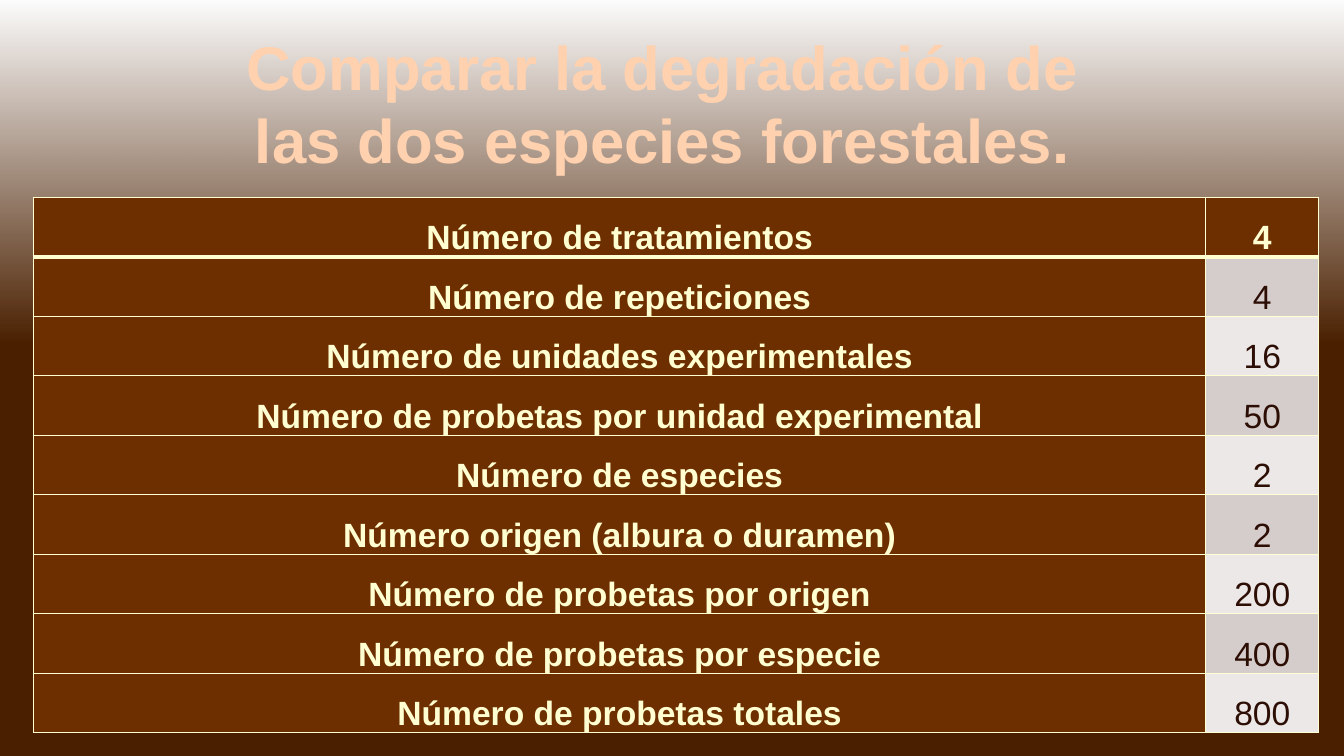
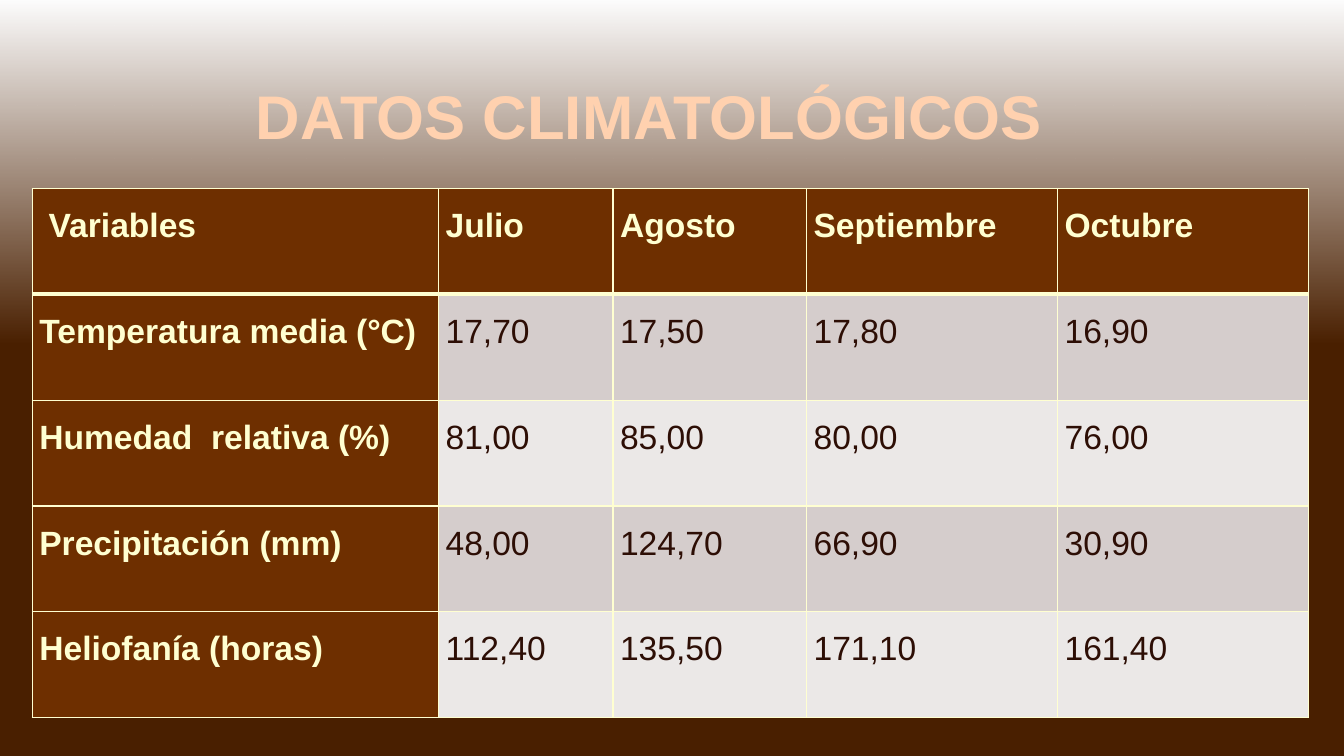
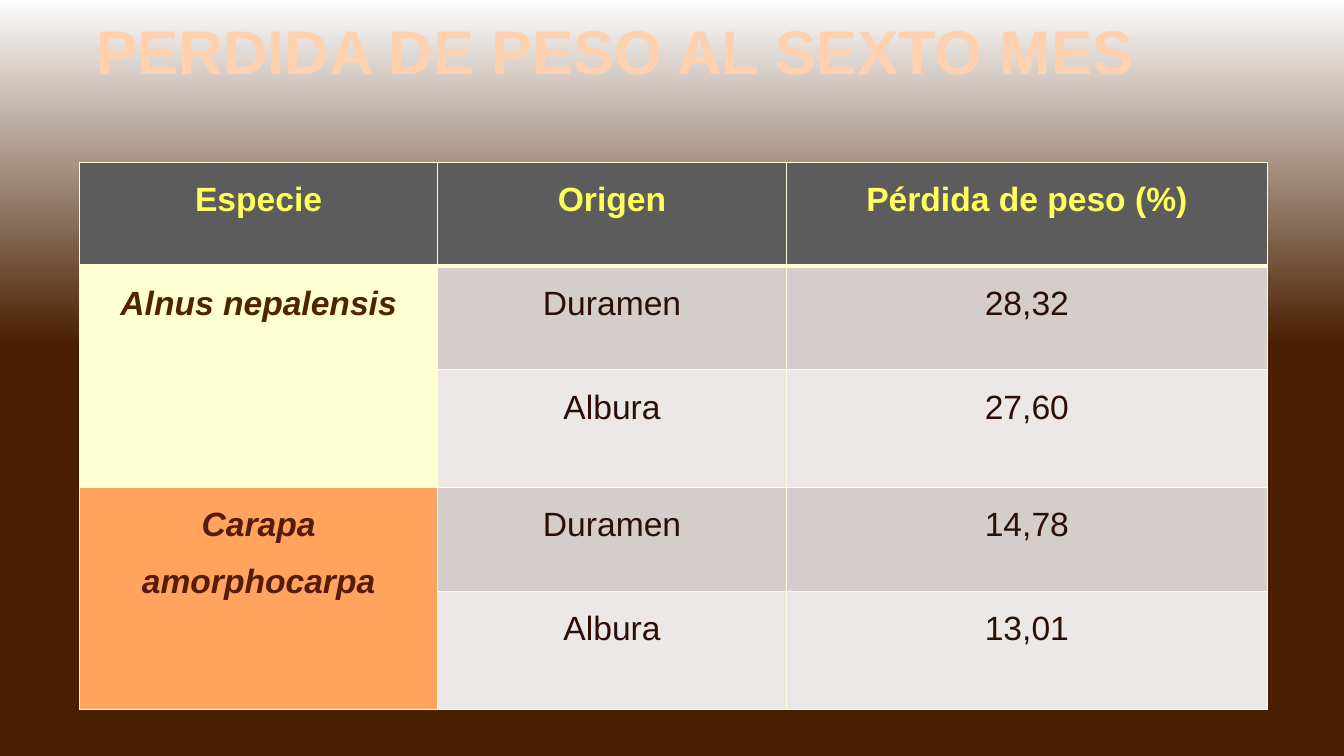
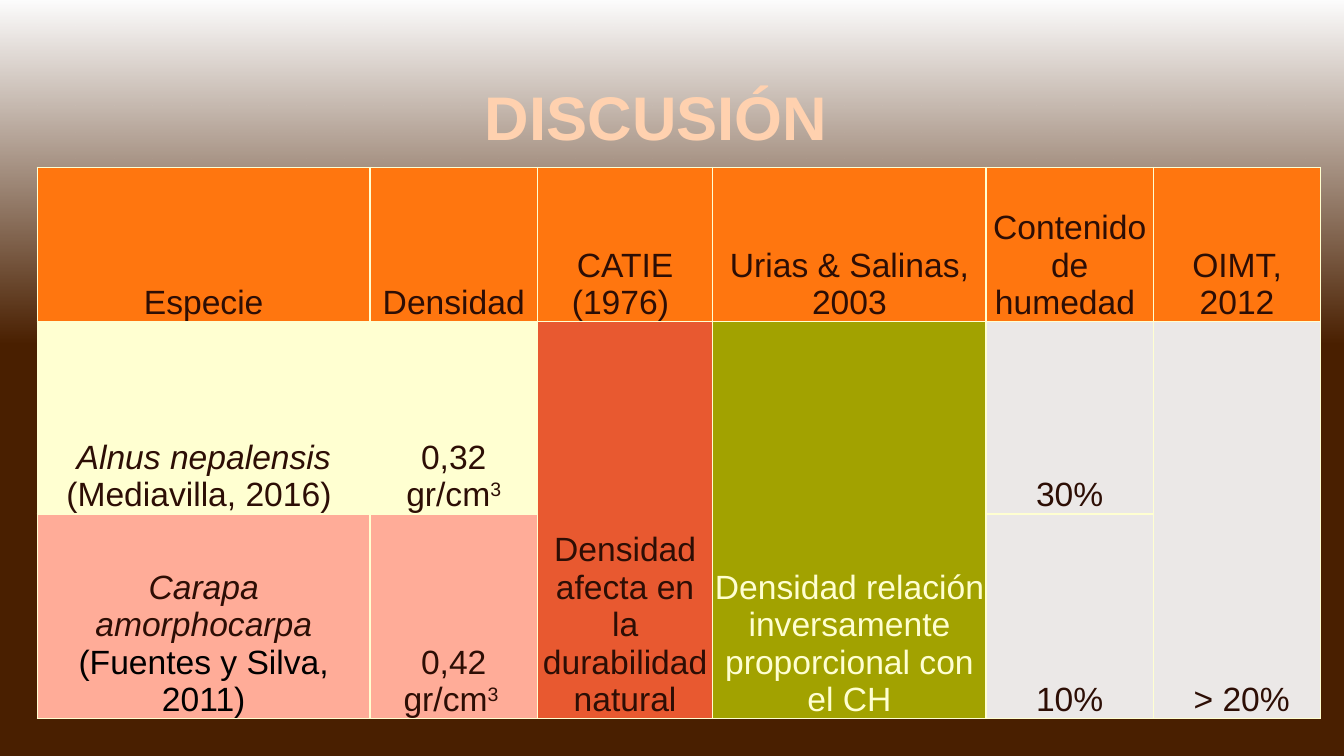
import lxml.etree
import pptx
import pptx.dml.color
import pptx.enum.dml
import pptx.enum.shapes
import pptx.enum.text
import pptx.oxml.ns
import pptx.util

Inches = pptx.util.Inches
qn = pptx.oxml.ns.qn
ALIGN = pptx.enum.text.PP_ALIGN
ANCHOR = pptx.enum.text.MSO_ANCHOR

COLORS = {
    "background": "491F00", "white": "FFFFFF", "black": "000000",
    "brown": "6E2F00", "peach": "FFD1AF", "cream": "FFFFD1", "ink": "2D0E05",
    "dark_band": "D5CDCC", "light_band": "EBE8E7",
    "gray": "5C5C5C", "yellow": "FFFF5D", "bark": "522300",
    "apricot": "FFA35F", "russet": "561B0A", "orange": "FF760F",
    "salmon": "FFAC98", "red": "E85930", "olive": "A2A200",
}


def rgb(color):
    return pptx.dml.color.RGBColor.from_string(COLORS[color])


def write(paragraph, text, size=24, color="ink", bold=False, italic=False,
          superscript=False, patterned=False):
    run = paragraph.add_run()
    run.text = text
    font = run.font
    font.name, font.size = "Arial", pptx.util.Pt(size)
    font.bold, font.italic = bold, italic
    properties = run._r.get_or_add_rPr()
    if superscript:
        properties.set("baseline", "30000")
    if patterned:
        outline = lxml.etree.SubElement(properties, qn("a:ln"), w="12700")
        outline_fill = lxml.etree.SubElement(outline, qn("a:solidFill"))
        lxml.etree.SubElement(outline_fill, qn("a:srgbClr"), val=COLORS["brown"])
        properties.insert(0, outline)
        font.fill.patterned()
        font.fill.pattern = pptx.enum.dml.MSO_PATTERN.PERCENT_50
        font.fill.fore_color.rgb = rgb("brown")
        font.fill.back_color.rgb = rgb(color)
    else:
        font.fill.solid()
        font.fill.fore_color.rgb = rgb(color)


# Cell styles: fill, then text format
label = ("brown", dict(color="cream", bold=True))
gray_header = ("gray", dict(color="yellow", bold=True))
orange_header = ("orange", {})
banding = ("light_band", "dark_band")

# Slide contents; None continues the cell above it
slides = [
    dict(
        title="Comparar la degradación de las dos especies forestales.",
        title_box=(2.1, 0.44, 8.95, 1.15), title_anchor=ANCHOR.MIDDLE,
        title_align=ALIGN.CENTER,
        at=(0.33, 1.96), widths=[11.63, 1.12], heights=[0.59] * 9,
        margins=(0.05, 0), anchor=ANCHOR.BOTTOM, align=ALIGN.CENTER,
        spacing=1.5, header=label, header_line=3, first_column=label,
        bands=banding, special={},
        cells=[
            ["Número de tratamientos", "4"],
            ["Número de repeticiones", "4"],
            ["Número de unidades experimentales", "16"],
            ["Número de probetas por unidad experimental", "50"],
            ["Número de especies", "2"],
            ["Número origen (albura o duramen)", "2"],
            ["Número de probetas por origen", "200"],
            ["Número de probetas por especie", "400"],
            ["Número de probetas totales", "800"],
        ]),
    dict(
        title="DATOS CLIMATOLÓGICOS",
        title_box=(0.44, 0.51, 12, 1.25), title_anchor=ANCHOR.MIDDLE,
        title_align=ALIGN.CENTER,
        at=(0.32, 1.87), widths=[4.03, 1.73, 1.92, 2.49, 2.49],
        heights=[1.05] * 5,
        margins=(0.07, 0), anchor=ANCHOR.TOP, align=ALIGN.LEFT,
        spacing=1.5, header=label, header_line=3, first_column=label,
        bands=banding, special={},
        cells=[
            [" Variables", "Julio", "Agosto", "Septiembre", "Octubre"],
            ["Temperatura media (°C)", "17,70", "17,50", "17,80", "16,90"],
            ["Humedad  relativa (%)", "81,00", "85,00", "80,00", "76,00"],
            ["Precipitación (mm)", "48,00", "124,70", "66,90", "30,90"],
            ["Heliofanía (horas)", "112,40", "135,50", "171,10", "161,40"],
        ]),
    dict(
        title="PERDIDA DE PESO AL SEXTO MES",
        title_box=(0.81, 0.08, 10.6, 0.84), title_anchor=ANCHOR.TOP,
        title_align=ALIGN.CENTER,
        at=(0.79, 1.61), widths=[3.55, 3.46, 4.77],
        heights=[1.03, 1.03, 1.17, 1.03, 1.17],
        margins=(0.07, 0), anchor=ANCHOR.TOP, align=ALIGN.CENTER,
        spacing=1.5, header=gray_header, header_line=3, first_column=None,
        bands=banding,
        special={
            (1, 0): ("cream", dict(color="bark", bold=True, italic=True)),
            (3, 0): ("apricot", dict(color="russet", bold=True, italic=True)),
        },
        cells=[
            ["Especie", "Origen", "Pérdida de peso (%)"],
            ["Alnus nepalensis", "Duramen", "28,32"],
            [None, "Albura", "27,60"],
            ["Carapa amorphocarpa", "Duramen", "14,78"],
            [None, "Albura", "13,01"],
        ]),
    dict(
        title="DISCUSIÓN",
        title_box=(4.71, 0.73, 4.56, 0.84), title_anchor=ANCHOR.TOP,
        title_align=ALIGN.LEFT,
        at=(0.37, 1.66), widths=[3.3, 1.66, 1.74, 2.71, 1.66, 1.66],
        heights=[1.53, 1.91, 2.03],
        margins=(0.01, 0.01), anchor=ANCHOR.BOTTOM, align=ALIGN.CENTER,
        spacing=1, header=orange_header, header_line=1, first_column=None,
        bands=("light_band", "light_band"),
        special={
            (1, 0): ("cream", {}), (1, 1): ("cream", {}),
            (2, 0): ("salmon", {}), (2, 1): ("salmon", {}),
            (1, 2): ("red", {}), (1, 3): ("olive", dict(color="cream")),
        },
        cells=[
            ["Especie", "Densidad", "CATIE (1976) ", "Urias & Salinas, 2003",
             "Contenido de humedad ", "OIMT, 2012"],
            [[("Alnus nepalensis ", dict(italic=True)), ("(Mediavilla, 2016) ", {})],
             [("0,32 gr/cm", {}), ("3", dict(superscript=True))],
             "Densidad afecta en la durabilidad natural",
             "Densidad relación inversamente proporcional con el CH",
             "30%", " > 20%"],
            [[("Carapa amorphocarpa ", dict(italic=True)),
              ("(Fuentes y Silva, 2011)", dict(color="black"))],
             [("0,42 gr/cm", {}), ("3 ", dict(superscript=True))],
             None, None, "10%", None],
        ]),
]

deck = pptx.Presentation()
deck.slide_width, deck.slide_height = Inches(13.33), Inches(7.5)
title_only = deck.slide_layouts[5]

# Shared background colour
master = deck.slide_master
master.background.fill.solid()
master.background.fill.fore_color.rgb = rgb("background")

for number, content in enumerate(slides):
    slide = deck.slides.add_slide(title_only)

    # White fade at the top, built once and kept on the master
    if number == 0:
        fade = slide.shapes.add_shape(
            pptx.enum.shapes.MSO_SHAPE.RECTANGLE, 0, 0, deck.slide_width, Inches(3.42))
        fade.shadow.inherit = False
        fade.line.fill.background()
        fade.fill.gradient()
        fade.fill.gradient_angle = 270
        for stop in fade.fill.gradient_stops:
            stop.color.rgb = rgb("white")
        clear_color = fade.element.xpath(".//a:gs/a:srgbClr")[-1]
        lxml.etree.SubElement(clear_color, qn("a:alpha"), val="0")
        master.element.cSld.spTree.insert(2, fade.element)

    # Title
    heading = slide.shapes.title
    heading.left, heading.top, heading.width, heading.height = map(
        Inches, content["title_box"])
    heading.text_frame.word_wrap = True
    heading.text_frame.auto_size = pptx.enum.text.MSO_AUTO_SIZE.NONE
    heading.text_frame.vertical_anchor = content["title_anchor"]
    heading_line = heading.text_frame.paragraphs[0]
    heading_line.alignment = content["title_align"]
    write(heading_line, content["title"], size=44, color="peach", bold=True,
          patterned=True)

    # Table grid
    cells, widths, heights = content["cells"], content["widths"], content["heights"]
    left, top = content["at"]
    table = slide.shapes.add_table(
        len(heights), len(widths), Inches(left), Inches(top),
        Inches(sum(widths)), Inches(sum(heights))).table
    table.first_row = table.horz_banding = False
    for column, width in zip(table.columns, widths):
        column.width = Inches(width)
    for row, height in zip(table.rows, heights):
        row.height = Inches(height)

    # Table cells
    for r, row_cells in enumerate(cells):
        for c, value in enumerate(row_cells):
            cell = table.cell(r, c)
            style_row = r
            if value is None:
                style_row = r - 1
                table.cell(style_row, c).merge(cell)

            if (style_row, c) in content["special"]:
                fill, text_format = content["special"][style_row, c]
            elif r == 0:
                fill, text_format = content["header"]
            elif c == 0 and content["first_column"]:
                fill, text_format = content["first_column"]
            else:
                fill, text_format = content["bands"][style_row % 2], {}

            for side in ("L", "R", "T", "B"):
                under_header = (r, side) in ((0, "B"), (1, "T"))
                points = content["header_line"] if under_header else 1
                border = lxml.etree.SubElement(
                    cell._tc.get_or_add_tcPr(), qn("a:ln" + side), w=str(points * 12700))
                border_fill = lxml.etree.SubElement(border, qn("a:solidFill"))
                lxml.etree.SubElement(border_fill, qn("a:srgbClr"), val=COLORS["cream"])
            cell.fill.solid()
            cell.fill.fore_color.rgb = rgb(fill)

            side_margin, top_margin = content["margins"]
            cell.margin_left = cell.margin_right = Inches(side_margin)
            cell.margin_top, cell.margin_bottom = Inches(top_margin), 0
            cell.vertical_anchor = content["anchor"]
            if value is None:
                continue
            paragraph = cell.text_frame.paragraphs[0]
            paragraph.alignment = content["align"]
            paragraph.line_spacing = float(content["spacing"])
            runs = [(value, {})] if isinstance(value, str) else value
            for text, extra in runs:
                write(paragraph, text, **{**text_format, **extra})

deck.save("out.pptx")
